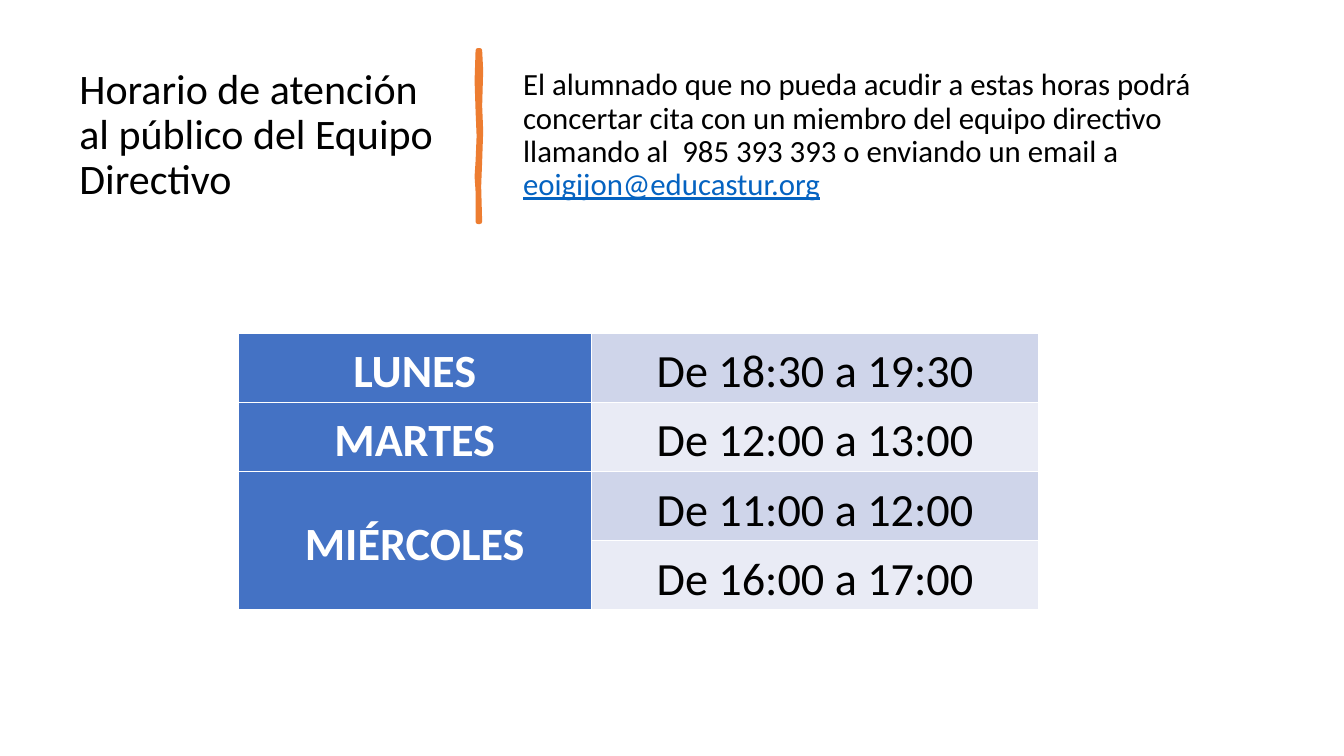
from lxml import etree
from pptx import Presentation
from pptx import util as u
from pptx.dml.color import RGBColor
from pptx.enum import text
from pptx.oxml import ns

THEME = {
    "font": "Calibri",
    "title_size": 30, "body_size": 22, "table_size": 33,
    "black": "000000", "white": "FFFFFF", "link": "0563C1", "accent": "ED7D31",
    "day": "4472C4", "bands": ("CFD5EA", "E9EBF5"),
}

deck = Presentation()
deck.slide_width, deck.slide_height = u.Inches(13.33), u.Inches(7.5)
# Square grid: 96 columns by 54 rows
COL, ROW = deck.slide_width / 96, deck.slide_height / 54
page = deck.slides.add_slide(deck.slide_layouts[1])


def place(box, left, top, width, height):
    box.left, box.width = round(left * COL), round(width * COL)
    box.top, box.height = round(top * ROW), round(height * ROW)


def style(para, size, color, align, spacing, after=0, bold=False):
    para.alignment, para.line_spacing = align, spacing
    para.space_before, para.space_after = u.Pt(0), u.Pt(after)
    for span in para.runs:
        span.font.name, span.font.size = THEME["font"], u.Pt(THEME[size])
        span.font.bold = bold
        span.font.color.rgb = RGBColor.from_string(THEME[color])


# Title and contact note
title, note = page.placeholders
header_top, header_height = 3.95, 11.5
place(title, 4.95, header_top, 26.9, header_height)
place(note, 36.65, header_top, 54.3, header_height)
title.text_frame.text = "Horario de atención al público del Equipo Directivo"
note.text_frame.text = (
    "El alumnado que no pueda acudir a estas horas podrá concertar cita con un "
    "miembro del equipo directivo llamando al  985 393 393 o enviando un email a ")
note_para = note.text_frame.paragraphs[0]
email = note_para.add_run()
email.text = "eoigijon@educastur.org"
props = note_para._p.get_or_add_pPr()
props.set("marL", "0")
props.set("indent", "0")
etree.SubElement(props, ns.qn("a:buNone"))
for box, size, after in ((title, "title_size", 0), (note, "body_size", 10)):
    box.text_frame.word_wrap = True
    box.text_frame.auto_size = text.MSO_AUTO_SIZE.NONE
    box.text_frame.vertical_anchor = text.MSO_ANCHOR.MIDDLE
    style(box.text_frame.paragraphs[0], size, "black", text.PP_ALIGN.LEFT, 0.9, after)
email.font.underline = True
email.font.color.rgb = RGBColor.from_string(THEME["link"])

# Hand-drawn divider: right edge down, left edge back up (hundredths of an inch)
right_edge = [(476, 50), (477, 70), (476, 105), (477, 130), (476, 160),
              (475, 185), (476, 220)]
left_edge = [(474, 220), (474, 190), (473, 175), (474, 160), (475, 135),
             (474, 110), (473, 80), (474, 50)]
outline = page.shapes.build_freeform(*right_edge[0], scale=u.Inches(0.01))
outline.add_line_segments(right_edge[1:] + left_edge, close=True)
divider = outline.convert_to_shape()
divider.shadow.inherit = False
divider.fill.solid()
divider.fill.fore_color.rgb = RGBColor.from_string(THEME["accent"])
divider.line.color.rgb = RGBColor.from_string(THEME["accent"])
divider.line.width = u.Pt(3.25)
etree.SubElement(divider.line._get_or_add_ln(), ns.qn("a:round"))

# Timetable
timetable = [("LUNES", "De 18:30 a 19:30"), ("MARTES", "De 12:00 a 13:00"),
             ("MIÉRCOLES", "De 11:00 a 12:00"), ("", "De 16:00 a 17:00")]
column_widths, row_height = (25.25, 31.95), 4.94
frame = page.shapes.add_table(len(timetable), 2, 0, 0, 1, 1)
place(frame, 17, 23.8, sum(column_widths), row_height * len(timetable))
table = frame.table
table.first_row = table.horz_banding = False
for column, width in zip(table.columns, column_widths):
    column.width = round(width * COL)
for r, entries in enumerate(timetable):
    table.rows[r].height = round(row_height * ROW)
    for c, entry in enumerate(entries):
        is_day = c == 0
        cell = table.cell(r, c)
        cell.text = entry
        cell.vertical_anchor = text.MSO_ANCHOR.MIDDLE
        cell.margin_left = cell.margin_right = u.Inches(0.1)
        cell.margin_top = cell.margin_bottom = 0
        style(cell.text_frame.paragraphs[0], "table_size", "white" if is_day else "black",
              text.PP_ALIGN.CENTER, 1.15, 10, is_day)
        # White borders go before the fill in the cell properties
        cell_props = cell._tc.get_or_add_tcPr()
        for side in ("a:lnL", "a:lnR", "a:lnT", "a:lnB"):
            border = etree.SubElement(cell_props, ns.qn(side), w=str(u.Pt(1)))
            paint = etree.SubElement(border, ns.qn("a:solidFill"))
            etree.SubElement(paint, ns.qn("a:srgbClr"), val=THEME["white"])
        cell.fill.solid()
        cell.fill.fore_color.rgb = RGBColor.from_string(
            THEME["day"] if is_day else THEME["bands"][r % 2])
table.cell(2, 0).merge(table.cell(3, 0))

deck.save("out.pptx")
